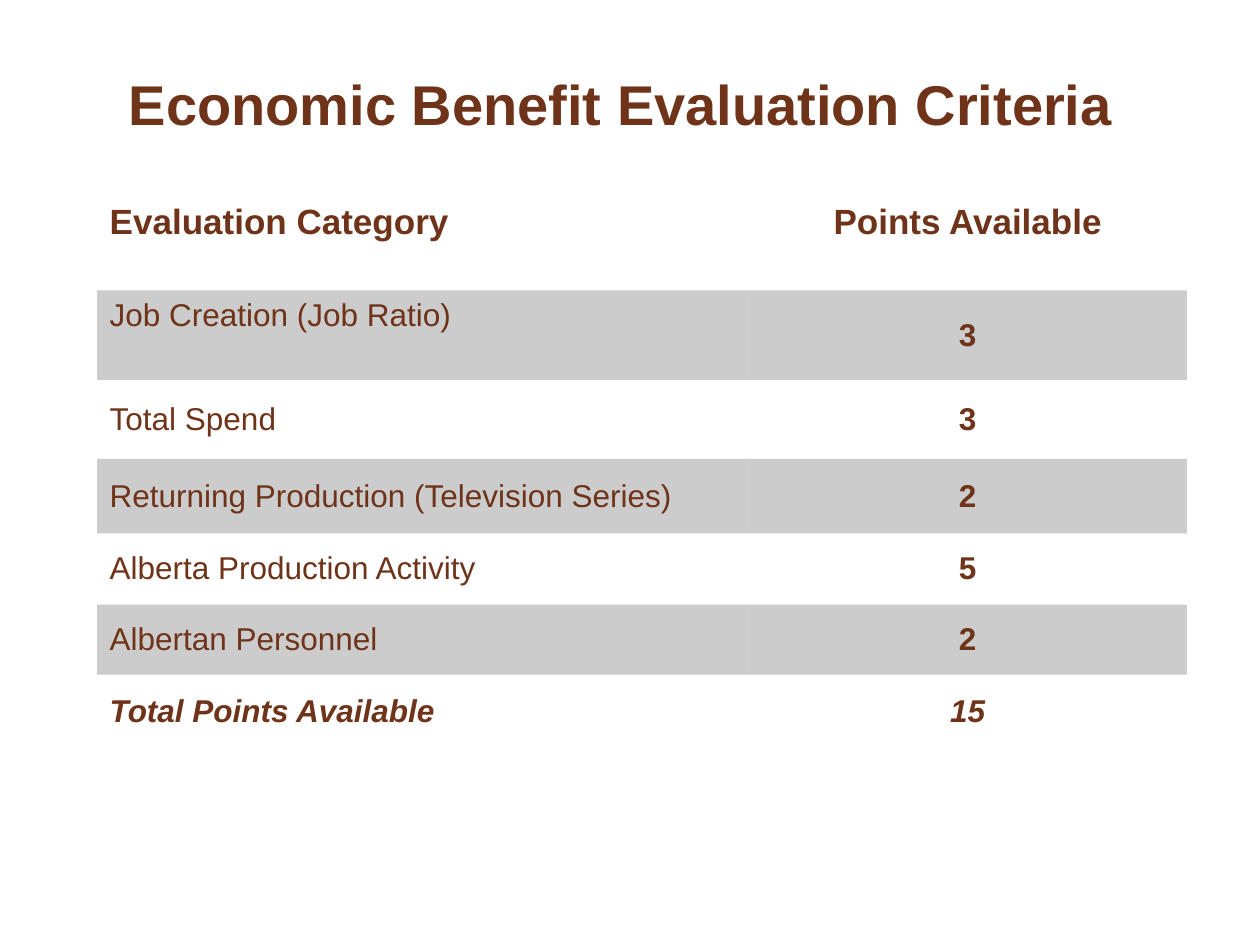
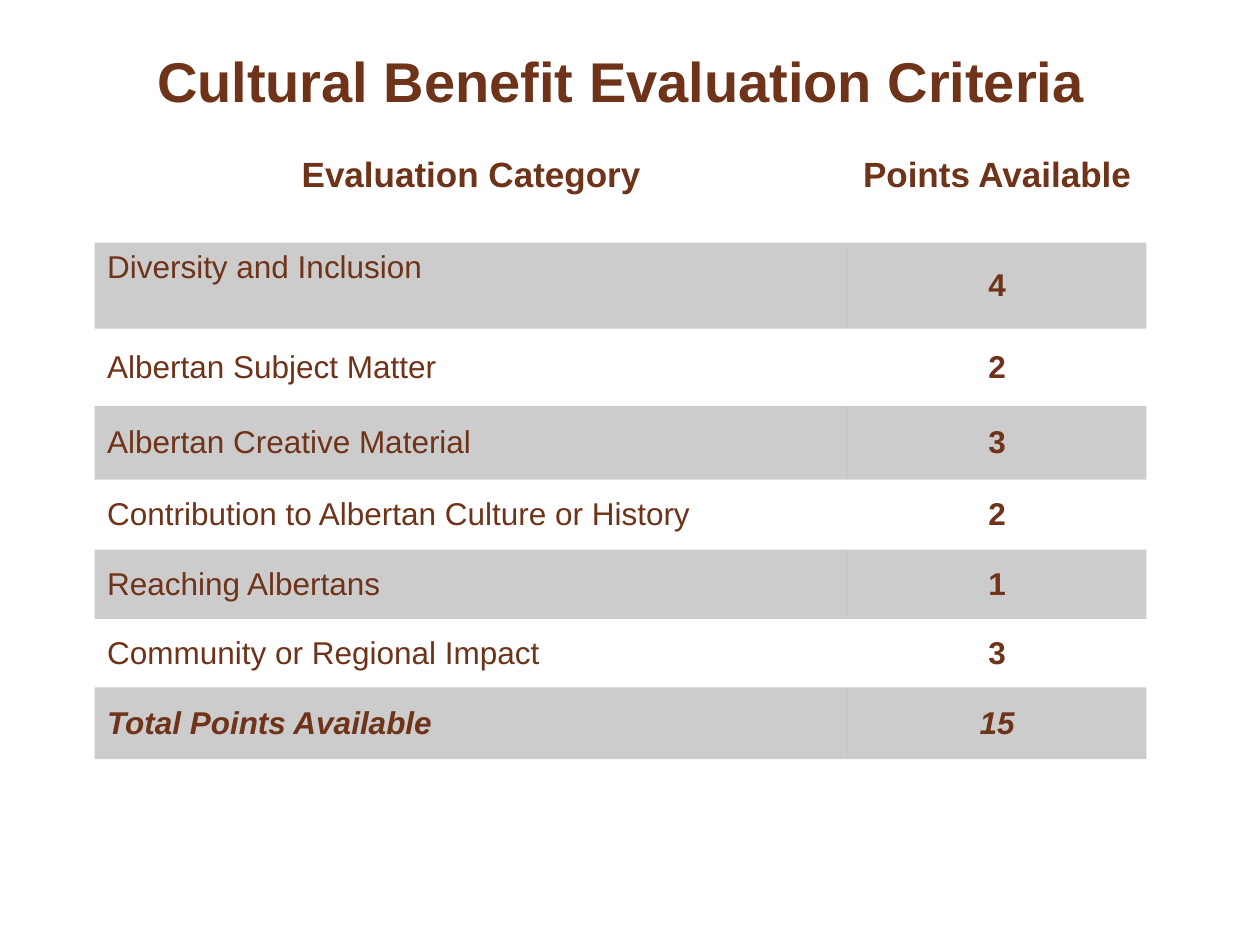
"""Build two slides of evaluation criteria, each a title over a points table."""
from dataclasses import dataclass

from lxml import etree
from pptx import Presentation
from pptx.dml.color import RGBColor
from pptx.enum import text
from pptx.oxml import ns
from pptx.util import Pt

LEFT, MID = text.PP_ALIGN.LEFT, text.PP_ALIGN.CENTER
TOP, CENTRE = text.MSO_ANCHOR.TOP, text.MSO_ANCHOR.MIDDLE


@dataclass(frozen=True)
class Theme:
    font: str = "Arial"
    ink: str = "6E3319"
    band: str = "000000"
    alpha: int = 20
    title: int = 32
    head: int = 20
    body: int = 18
    plain: str = "{2D5ABB26-0587-4C30-8999-92F81FD0307C}"


class Deck:
    def __init__(self, theme):
        self.theme = theme
        self.prs = Presentation()
        self.prs.slide_width, self.prs.slide_height = Pt(720), Pt(540)
        self.slide = None

    def page(self):
        self.slide = self.prs.slides.add_slide(self.prs.slide_layouts[6])

    def label(self, frame, words, size, align=LEFT, bold=True, italic=False):
        para = frame.paragraphs[0]
        para.alignment = align
        run = para.add_run()
        run.text = words
        font = run.font
        font.name, font.size = self.theme.font, Pt(size)
        font.bold, font.italic = bold, italic
        font.color.rgb = RGBColor.from_string(self.theme.ink)

    def title(self, words, top):
        box = self.slide.shapes.add_textbox(Pt(31), Pt(top), Pt(648), Pt(57.6))
        frame = box.text_frame
        frame.word_wrap = True
        frame.margin_top = Pt(6.5)
        self.label(frame, words, self.theme.title, MID)

    def shade(self, cell, dark):
        if not dark:
            cell.fill.background()
            return
        cell.fill.solid()
        cell.fill.fore_color.rgb = RGBColor.from_string(self.theme.band)
        tint = cell.fill.fore_color._xFill.find(ns.qn("a:srgbClr"))
        etree.SubElement(tint, ns.qn("a:alpha"), val=str(self.theme.alpha * 1000))

    def table(self, left, top, widths, heights, rows, align):
        frame = self.slide.shapes.add_table(
            len(rows), len(widths), Pt(left), Pt(top), Pt(sum(widths)), Pt(sum(heights)))
        grid = frame.table
        grid.first_row = grid.horz_banding = False
        for style in frame.element.iter(ns.qn("a:tableStyleId")):
            style.text = self.theme.plain
        for col, width in zip(grid.columns, widths):
            col.width = Pt(width)
        last = len(rows) - 1
        for r, (row, height) in enumerate(zip(rows, heights)):
            grid.rows[r].height = Pt(height)
            for c, words in enumerate(row):
                cell = grid.cell(r, c)
                self.shade(cell, r % 2 == 1)
                high = r == 0 or (r == 1 and c == 0)
                cell.vertical_anchor = TOP if high else CENTRE
                if r == 1 and c == 0:
                    cell.margin_top = Pt(4.5)
                side = MID if c else align if r == 0 else LEFT
                size = self.theme.body if r else self.theme.head
                self.label(cell.text_frame, words, size, side,
                           bold=c == 1 or r in (0, last), italic=r == last)

    def criteria(self, name, head, left, top, widths, heights, items, align):
        self.page()
        self.title(f"{name} Benefit Evaluation Criteria", head)
        total = sum(points for _, points in items)
        rows = [("Evaluation Category", "Points Available"),
                *((item, str(points)) for item, points in items),
                ("Total Points Available", str(total))]
        self.table(left, top, widths, heights, rows, align)


def main():
    deck = Deck(Theme())
    deck.criteria(
        "Economic", 33, 55.5, 112.3, (372.2, 250.6),
        (53.7, 51.1, 45.1, 42.6, 40.8, 40, 41.8),
        [("Job Creation (Job Ratio)", 3),
         ("Total Spend", 3),
         ("Returning Production (Television Series)", 2),
         ("Alberta Production Activity", 5),
         ("Albertan Personnel", 2)], LEFT)
    deck.criteria(
        "Cultural", 20, 54, 85.5, (430.5, 170.6),
        (53.1, 49.2, 44.2, 42.2, 40, 39.5, 39.2, 41),
        [("Diversity and Inclusion", 4),
         ("Albertan Subject Matter", 2),
         ("Albertan Creative Material", 3),
         ("Contribution to Albertan Culture or History", 2),
         ("Reaching Albertans", 1),
         ("Community or Regional Impact", 3)], MID)
    deck.prs.save("out.pptx")


if __name__ == "__main__":
    main()
